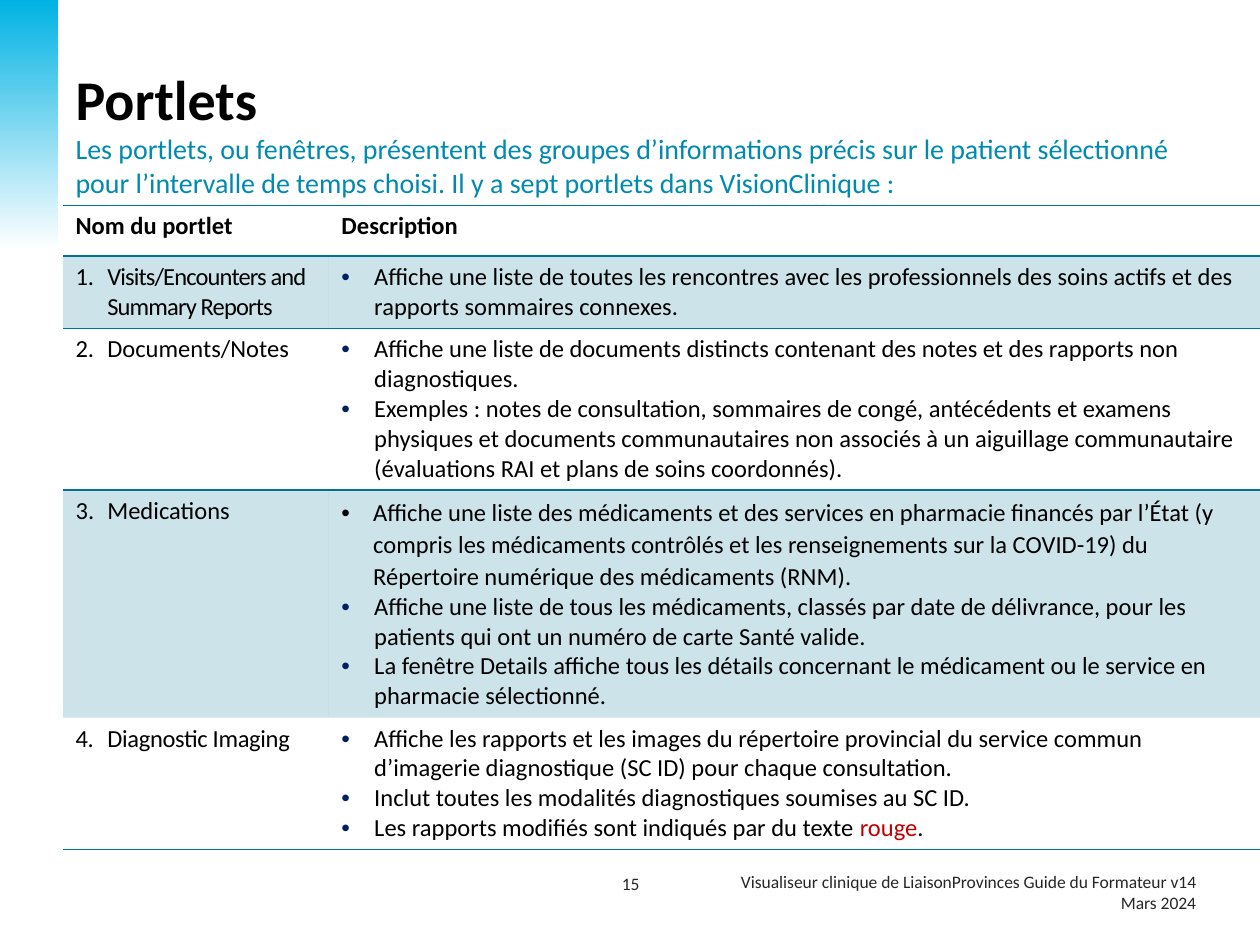
"""Build the training slide that describes the first four portlets."""
import pptx
import pptx.util
import pptx.dml.color
import pptx.enum.shapes
import pptx.enum.text
import pptx.oxml
import pptx.oxml.ns
from lxml import etree

Cm = pptx.util.Cm
Pt = pptx.util.Pt
RGBColor = pptx.dml.color.RGBColor
PP_ALIGN = pptx.enum.text.PP_ALIGN
ANCHOR = pptx.enum.text.MSO_ANCHOR
qn = pptx.oxml.ns.qn

BLACK = RGBColor(0x00, 0x00, 0x00)
WHITE = RGBColor(0xFF, 0xFF, 0xFF)
SKY = RGBColor(0x00, 0xB2, 0xE3)
SUBTITLE_BLUE = RGBColor(0x00, 0x8A, 0xB0)
TEAL = RGBColor(0x00, 0x73, 0x92)
NAVY = RGBColor(0x00, 0x20, 0x60)
RED = RGBColor(0xC0, 0x00, 0x00)
GREY = RGBColor(0x26, 0x26, 0x26)

HEADERS = ["Nom du portlet", "Description"]
PORTLETS = [
    ("Visits/Encounters and Summary Reports", -50, [
        "Affiche une liste de toutes les rencontres avec les professionnels des soins actifs et des rapports sommaires connexes.",
    ]),
    ("Documents/Notes", 0, [
        "Affiche une liste de documents distincts contenant des notes et des rapports non diagnostiques.",
        "Exemples\u00a0: notes de consultation, sommaires de congé, antécédents et examens physiques et documents communautaires non associés à un aiguillage communautaire (évaluations RAI et plans de soins coordonnés).",
    ]),
    ("3.\tMedications", 0, [
        "Affiche une liste des médicaments et des services en pharmacie financés par l’État (y compris les médicaments contrôlés et les renseignements sur la COVID-19) du Répertoire numérique des médicaments (RNM).",
        "Affiche une liste de tous les médicaments, classés par date de délivrance, pour les patients qui ont un numéro de carte Santé valide.",
        "La fenêtre Details affiche tous les détails concernant le médicament ou le service en pharmacie sélectionné.",
    ]),
    ("4.\tDiagnostic Imaging", -20, [
        "Affiche les rapports et les images du répertoire provincial du service commun d’imagerie diagnostique (SC ID) pour chaque consultation.",
        "Inclut toutes les modalités diagnostiques soumises au SC ID.",
        "Les rapports modifiés sont indiqués par du texte |rouge|.",
    ]),
]


def add_property(parent, tag, **attributes):
    return etree.SubElement(parent, qn(tag), {key: str(value) for key, value in attributes.items()})


def set_font(font, size, color, bold=False):
    font.name = "Calibri"
    font.size = Pt(size)
    font.bold = bold
    font.color.rgb = color


deck = pptx.Presentation()
deck.slide_width = Cm(25.4)
deck.slide_height = Cm(19.05)
slide = deck.slides.add_slide(deck.slide_layouts[5])

side_band = slide.shapes.add_shape(
    pptx.enum.shapes.MSO_SHAPE.RECTANGLE, 0, 0, Cm(1.17), Cm(5.03))
side_band.shadow.inherit = False
side_band.line.fill.background()
side_band.fill.gradient()
side_band.fill.gradient_angle = 270
for stop, color, position in zip(side_band.fill.gradient_stops, (SKY, WHITE), (0, 1)):
    stop.color.rgb = color
    stop.position = position

title = slide.shapes.title
title.left, title.top, title.width, title.height = Cm(1.27), Cm(1.27), Cm(22.73), Cm(2.87)
title.text_frame.auto_size = pptx.enum.text.MSO_AUTO_SIZE.NONE
title.text_frame.vertical_anchor = ANCHOR.BOTTOM
heading = title.text_frame.paragraphs[0]
heading.alignment = PP_ALIGN.LEFT
heading_name = heading.add_run()
heading_name.text = "Portlets"
set_font(heading_name.font, 32, BLACK, True)
heading.add_line_break()
introduction = heading.add_run()
introduction.text = ("Les portlets, ou fenêtres, présentent des groupes d’informations précis sur le patient "
                     "sélectionné pour l’intervalle de temps choisi. Il y a sept portlets dans VisionClinique\u00a0:")
set_font(introduction.font, 16, SUBTITLE_BLUE)

row_heights = [1.02, 1.42, 2.62, 3.15, 2.62]
portlet_frame = slide.shapes.add_table(
    len(row_heights), 2, Cm(1.27), Cm(4.14), Cm(24.13), Cm(sum(row_heights)))
portlet_table = portlet_frame.table
portlet_table.horz_banding = False
portlet_table._tbl.tblPr.find(qn("a:tableStyleId")).text = "{2D5ABB26-0587-4C30-8999-92F81FD0307C}"
for column, width in zip(portlet_table.columns, (5.36, 18.77)):
    column.width = Cm(width)
for row, height in zip(portlet_table.rows, row_heights):
    row.height = Cm(height)

ruled_edges = {0: ("a:lnT", "a:lnB"), 1: ("a:lnT", "a:lnB"), 2: ("a:lnT",), 4: ("a:lnB",)}
for row_index in range(len(row_heights)):
    for column_index in range(2):
        cell = portlet_table.cell(row_index, column_index)
        cell_properties = cell._tc.get_or_add_tcPr()
        for edge in ruled_edges.get(row_index, ()):
            rule = add_property(cell_properties, edge, w=Pt(1))
            add_property(add_property(rule, "a:solidFill"), "a:srgbClr", val=TEAL)
        if row_index % 2:
            cell.fill.solid()
            cell.fill.fore_color.rgb = TEAL
            add_property(cell_properties.find(qn("a:solidFill"))[0], "a:alpha", val=20000)
        else:
            cell.fill.background()

for column_index, header in enumerate(HEADERS):
    header_line = portlet_table.cell(0, column_index).text_frame.paragraphs[0]
    header_line.text = header
    set_font(header_line.font, 14, BLACK, True)
portlet_table.cell(1, 0).margin_right = Cm(0.05)

for number, (name, spacing, descriptions) in enumerate(PORTLETS, 1):
    name_line = portlet_table.cell(number, 0).text_frame.paragraphs[0]
    name_line.text = name
    name_properties = name_line._p.get_or_add_pPr()
    if number != 3:
        name_properties.set("marL", str(Cm(0.64)))
        name_properties.set("indent", str(-Cm(0.64)))
    if number <= 2:
        add_property(name_properties, "a:buAutoNum", type="arabicPeriod", startAt=number)
    else:
        add_property(add_property(name_properties, "a:tabLst"), "a:tab", pos=Cm(0.64), algn="l")
    set_font(name_line.font, 14, BLACK)
    if spacing:
        name_line.runs[0]._r.get_or_add_rPr().set("spc", str(spacing))

    description_frame = portlet_table.cell(number, 1).text_frame
    for index, description in enumerate(descriptions):
        line = description_frame.add_paragraph() if index else description_frame.paragraphs[0]
        is_loose = number == 3 and index == 0
        line_properties = line._p.get_or_add_pPr()
        indent = Cm(0.64 if is_loose else 0.66)
        line_properties.set("marL", str(indent))
        line_properties.set("indent", str(-indent))
        if is_loose:
            line.line_spacing = 1.07
        else:
            add_property(add_property(line_properties, "a:buClr"), "a:srgbClr", val=NAVY)
        add_property(line_properties, "a:buFont", typeface="Arial")
        add_property(line_properties, "a:buChar", char="•")
        set_font(line.font, 14, BLACK)
        for part_index, part in enumerate(description.split("|")):
            run = line.add_run()
            run.text = part
            if part_index == 1:
                run.font.color.rgb = RED

footers = [
    (11.23, 2.97, 0.69, PP_ALIGN.CENTER, ANCHOR.TOP, ["15"]),
    (14.33, 10.03, 1.02, PP_ALIGN.RIGHT, ANCHOR.MIDDLE,
     ["Visualiseur clinique de LiaisonProvinces Guide du Formateur v14", "Mars 2024"]),
]
for left, width, height, alignment, anchor, lines in footers:
    footer = slide.shapes.add_textbox(Cm(left), Cm(17.48), Cm(width), Cm(height)).text_frame
    footer.word_wrap = True
    footer.vertical_anchor = anchor
    for index, text in enumerate(lines):
        line = footer.add_paragraph() if index else footer.paragraphs[0]
        line.text = text
        line.alignment = alignment
        set_font(line.font, 10, GREY)

deck.save("out.pptx")
